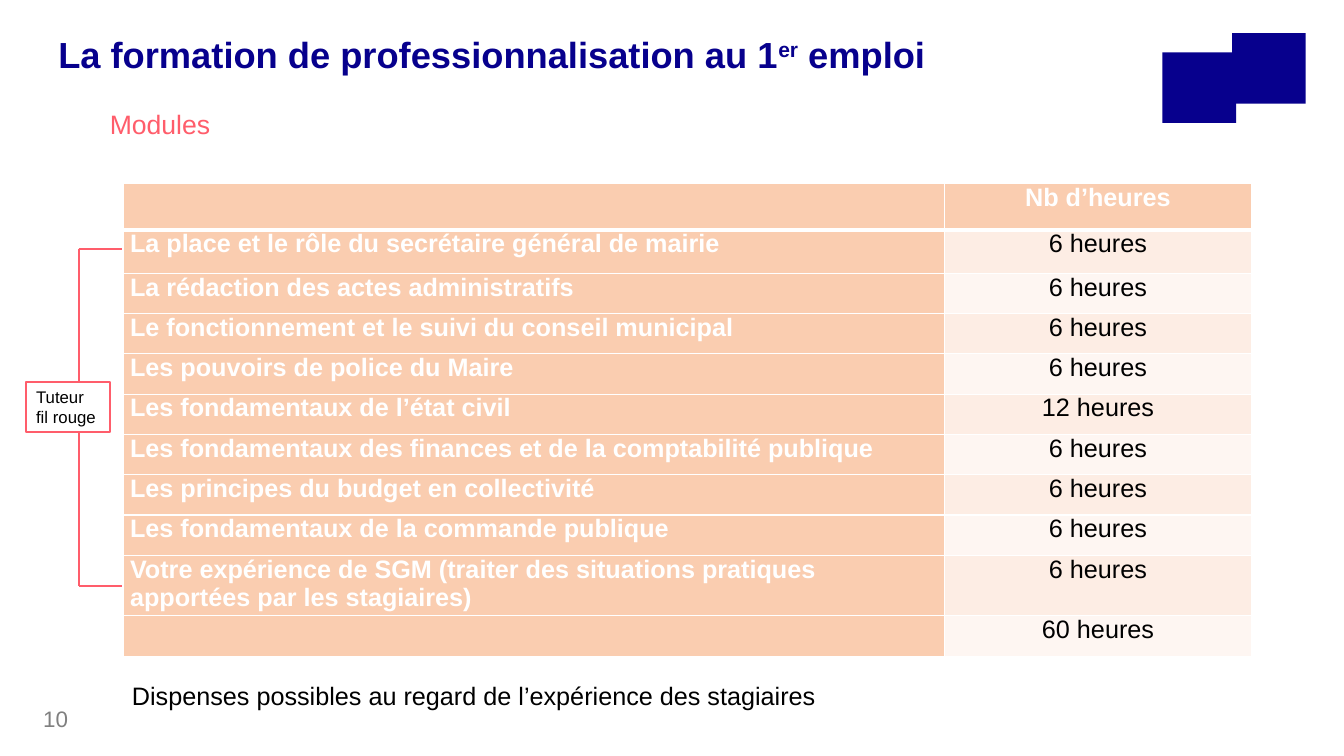
from dataclasses import dataclass
from typing import NamedTuple

from lxml import etree
from pptx import Presentation, util as u
from pptx.dml.color import RGBColor
from pptx.enum import shapes, text
from pptx.oxml import ns

EMU_PER_PX = 9144


def px(length: int) -> u.Emu:
    return u.Emu(length * EMU_PER_PX)


@dataclass(frozen=True)
class Theme:
    font: str = "Arial"
    navy: str = "07008D"
    coral: str = "FF5D6B"
    peach: str = "FACDB0"
    bands: tuple[str, str] = ("FDEDE4", "FEF6F2")
    white: str = "FFFFFF"
    black: str = "000000"
    gray: str = "808080"
    title_size: float = 25.9
    heading_size: float = 19
    body_size: float = 18
    number_size: float = 16
    label_size: float = 12
    line_width: float = 1.5
    border: float = 1
    header_border: float = 3


THEME = Theme()


class Box(NamedTuple):
    left: int
    top: int
    width: int
    height: int

    def emu(self) -> list[u.Emu]:
        return [px(length) for length in self]


class Label(NamedTuple):
    box: Box
    words: str
    size: float
    color: str
    bold: bool = False
    superscript: str = ""
    ending: str = ""
    spaced: bool = True


class Segment(NamedTuple):
    x1: int
    y1: int
    x2: int
    y2: int


class Module(NamedTuple):
    name: str
    hours: str
    height: int = 40


LABELS = [
    Label(Box(33, 695, 67, 37), "10", THEME.number_size, THEME.gray, spaced=False),
    Label(Box(99, 106, 181, 56), "Modules", THEME.heading_size, THEME.coral),
    Label(Box(121, 673, 1008, 56), "Dispenses possibles au regard de l’expérience des stagiaires",
          THEME.body_size, THEME.black),
    Label(Box(48, 32, 893, 56), "La formation de professionnalisation au 1", THEME.title_size,
          THEME.navy, True, "er", " emploi"),
]
SQUARES = [Box(1222, 33, 73, 70), Box(1153, 52, 73, 70)]
BRACKET = [Segment(78, 247, 78, 581), Segment(78, 247, 121, 247), Segment(78, 581, 121, 581)]
TUTOR_BOX = Box(26, 379, 83, 50)
TABLE_BOX = Box(122, 182, 1119, 470)
COLUMN_WIDTHS = (815, 304)
MODULES = [
    Module("", "Nb d’heures", 46),
    Module("La place et le rôle du secrétaire général de mairie", "6 heures", 43),
    Module("La rédaction des actes administratifs", "6 heures"),
    Module("Le fonctionnement et le suivi du conseil municipal", "6 heures"),
    Module("Les pouvoirs de police du Maire", "6 heures"),
    Module("Les fondamentaux de l’état civil", "12 heures"),
    Module("Les fondamentaux des finances et de la comptabilité publique", "6 heures"),
    Module("Les principes du budget en collectivité", "6 heures"),
    Module("Les fondamentaux de la commande publique", "6 heures"),
    Module("Votre expérience de SGM (traiter des situations pratiques apportées par les stagiaires)",
           "6 heures", 60),
    Module("", "60 heures"),
]


def style(paragraph, size: float, color: str, bold: bool = False) -> None:
    font = paragraph.font
    font.name, font.size, font.bold = THEME.font, u.Pt(size), bold
    font.color.rgb = RGBColor.from_string(color)


def add_label(slide, label: Label) -> None:
    frame = slide.shapes.add_textbox(*label.box.emu()).text_frame
    frame.word_wrap = True
    paragraph = frame.paragraphs[0]
    style(paragraph, label.size, label.color, label.bold)
    if label.spaced:
        paragraph.line_spacing = 0.9
        paragraph.space_before = u.Pt(10)
    paragraph.add_run().text = label.words
    if label.superscript:
        raised = paragraph.add_run()
        raised.text = label.superscript
        raised._r.get_or_add_rPr().set("baseline", "30000")
        paragraph.add_run().text = label.ending


def add_rectangle(slide, box: Box, fill: str):
    shape = slide.shapes.add_shape(shapes.MSO_SHAPE.RECTANGLE, *box.emu())
    shape.shadow.inherit = False
    shape.fill.solid()
    shape.fill.fore_color.rgb = RGBColor.from_string(fill)
    shape.line.fill.background()
    return shape


def stroke(line) -> None:
    line.color.rgb = RGBColor.from_string(THEME.coral)
    line.width = u.Pt(THEME.line_width)


def add_segment(slide, segment: Segment) -> None:
    connector = slide.shapes.add_connector(
        shapes.MSO_CONNECTOR.STRAIGHT, *[px(length) for length in segment])
    stroke(connector.line)
    etree.SubElement(connector._element.spPr, ns.qn("a:effectLst"))


def add_tutor(slide) -> None:
    shape = add_rectangle(slide, TUTOR_BOX, THEME.white)
    stroke(shape.line)
    frame = shape.text_frame
    frame.text = "Tuteur\nfil rouge"
    frame.vertical_anchor = text.MSO_ANCHOR.TOP
    for paragraph in frame.paragraphs:
        paragraph.alignment = text.PP_ALIGN.LEFT
        style(paragraph, THEME.label_size, THEME.black)


def set_borders(cell, top: float, bottom: float) -> None:
    """Draw white cell borders, placed before the fill as the schema asks."""
    properties = cell._tc.get_or_add_tcPr()
    sides = {"lnL": THEME.border, "lnR": THEME.border, "lnT": top, "lnB": bottom}
    for position, (side, width) in enumerate(sides.items()):
        line = etree.Element(ns.qn(f"a:{side}"), w=str(u.Pt(width)))
        fill = etree.SubElement(line, ns.qn("a:solidFill"))
        etree.SubElement(fill, ns.qn("a:srgbClr"), val=THEME.white)
        properties.insert(position, line)


def fill_cell(cell, words: str, row: int, column: int) -> None:
    strong = row == 0 or column == 0
    cell.fill.solid()
    cell.fill.fore_color.rgb = RGBColor.from_string(
        THEME.peach if strong else THEME.bands[(row - 1) % 2])
    cell.margin_left = cell.margin_right = px(7)
    cell.margin_top = cell.margin_bottom = 0
    cell.text = words
    paragraph = cell.text_frame.paragraphs[0]
    style(paragraph, THEME.body_size, THEME.white if strong else THEME.black, strong)
    if column == 1:
        paragraph.alignment = text.PP_ALIGN.CENTER
        paragraph._p.get_or_add_pPr().set("indent", str(px(-7)))
    set_borders(cell, THEME.header_border if row == 1 else THEME.border,
                THEME.header_border if row == 0 else THEME.border)


def add_modules(slide) -> None:
    table = slide.shapes.add_table(len(MODULES), len(COLUMN_WIDTHS), *TABLE_BOX.emu()).table
    table.first_row = table.horz_banding = False
    for column, width in enumerate(COLUMN_WIDTHS):
        table.columns[column].width = px(width)
    for row, module in enumerate(MODULES):
        table.rows[row].height = px(module.height)
        for column, words in enumerate((module.name, module.hours)):
            fill_cell(table.cell(row, column), words, row, column)


def main() -> None:
    presentation = Presentation()
    presentation.slide_width, presentation.slide_height = px(1333), px(750)
    slide = presentation.slides.add_slide(presentation.slide_layouts[6])
    for square in SQUARES:
        add_rectangle(slide, square, THEME.navy)
    add_modules(slide)
    for segment in BRACKET:
        add_segment(slide, segment)
    add_tutor(slide)
    for label in LABELS:
        add_label(slide, label)
    presentation.save("out.pptx")


if __name__ == "__main__":
    main()
